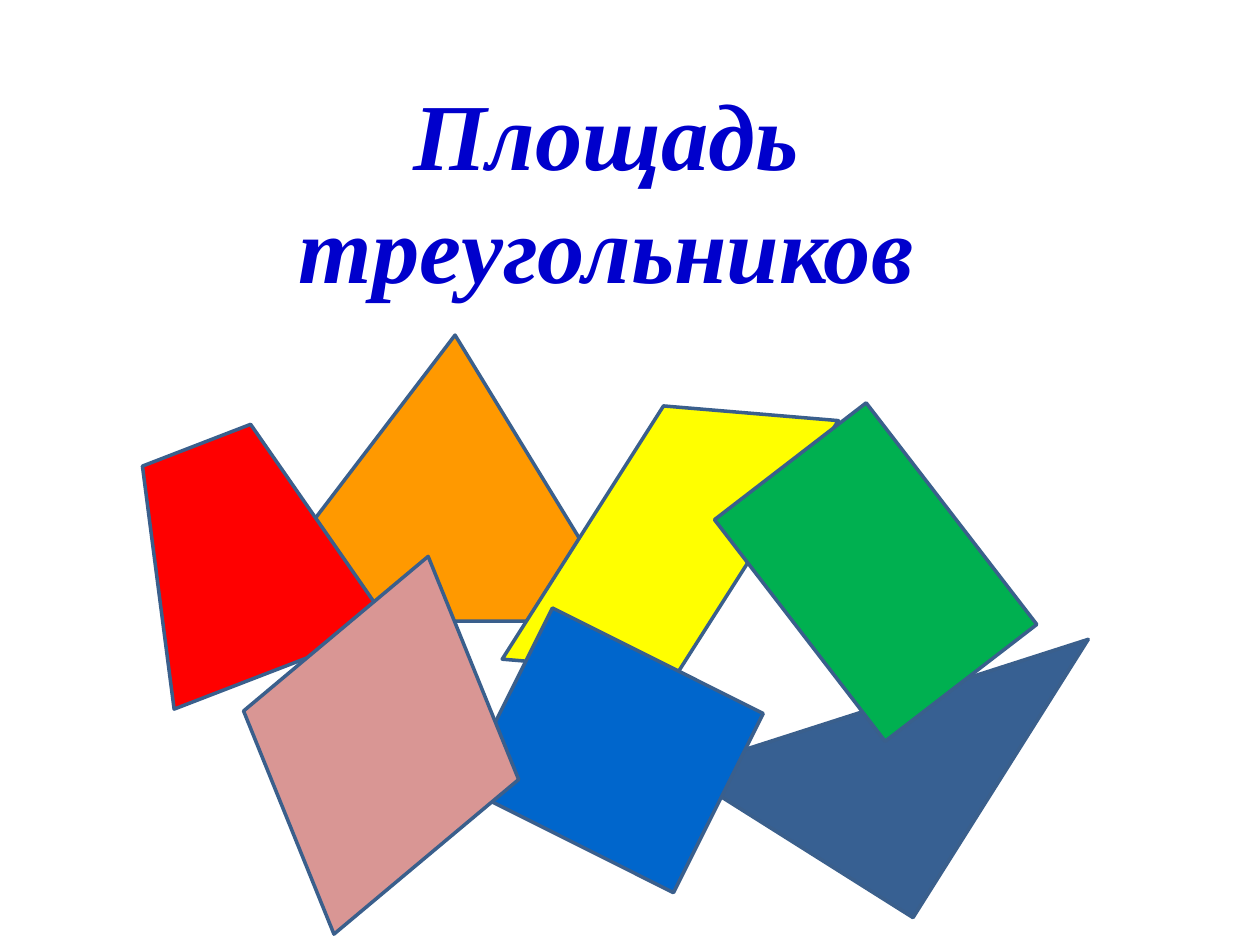
from dataclasses import dataclass

import pptx
import pptx.dml.color
import pptx.enum.shapes
import pptx.enum.text
import pptx.util

Inches = pptx.util.Inches
Pt = pptx.util.Pt
Kind = pptx.enum.shapes.MSO_SHAPE


@dataclass(frozen=True)
class Theme:
    font: str = "Times New Roman"
    title_size: float = 54
    title: str = "0000CC"
    outline: str = "3A5F8C"
    outline_width: float = 2
    orange: str = "FF9900"
    navy: str = "376092"
    yellow: str = "FFFF00"
    red: str = "FF0000"
    blue: str = "0066CC"
    green: str = "00B050"
    pink: str = "D99694"


def rgb(color):
    return pptx.dml.color.RGBColor.from_string(color)


class SlideBuilder:
    def __init__(self, slide, theme):
        self.slide = slide
        self.theme = theme

    def title(self, lines, box):
        heading = self.slide.shapes.add_textbox(*map(Inches, box))
        frame = heading.text_frame
        frame.word_wrap = True
        frame.auto_size = pptx.enum.text.MSO_AUTO_SIZE.SHAPE_TO_FIT_TEXT
        frame.text = "\n".join(lines)
        for paragraph in frame.paragraphs:
            paragraph.alignment = pptx.enum.text.PP_ALIGN.CENTER
            font = paragraph.font
            font.name = self.theme.font
            font.size = Pt(self.theme.title_size)
            font.bold = font.italic = True
            font.color.rgb = rgb(self.theme.title)

    def polygon(self, kind, box, color, rotation=0, adjustment=None):
        figure = self.slide.shapes.add_shape(kind, *map(Inches, box))
        figure.shadow.inherit = False
        figure.rotation = rotation
        if adjustment is not None:
            figure.adjustments[0] = adjustment
        figure.fill.solid()
        figure.fill.fore_color.rgb = rgb(color)
        figure.line.color.rgb = rgb(self.theme.outline)
        figure.line.width = Pt(self.theme.outline_width)


def main():
    deck = pptx.Presentation()
    deck.slide_width, deck.slide_height = Inches(10), Inches(7.5)
    theme = Theme()
    builder = SlideBuilder(deck.slides.add_slide(deck.slide_layouts[6]), theme)

    builder.title(["Площадь", "треугольников"], (0.55, 0.55, 8.52, 1.92))

    # Back to front: kind, box, colour, rotation, adjustment
    polygons = [
        (Kind.ISOSCELES_TRIANGLE, (1.88, 2.66, 3.12, 2.27), theme.orange, 0, 0.555),
        (Kind.RIGHT_TRIANGLE, (5.71, 4.5, 2.61, 2.19), theme.navy, 302.2),
        (Kind.PARALLELOGRAM, (4.07, 3.23, 2.5, 2.11), theme.yellow, 4.8, 0.525),
        (Kind.TRAPEZOID, (0.98, 3.47, 1.84, 1.89), theme.red, 338.9),
        (Kind.PARALLELOGRAM, (3.93, 5.16, 1.87, 1.59), theme.blue, 26.6, 0),
        (Kind.RECTANGLE, (6.19, 3.43, 1.52, 2.22), theme.green, 322.4),
        (Kind.DIAMOND, (1.9, 4.37, 2.25, 3.09), theme.pink, 14),
    ]
    for polygon in polygons:
        builder.polygon(*polygon)

    deck.save("out.pptx")


if __name__ == "__main__":
    main()
